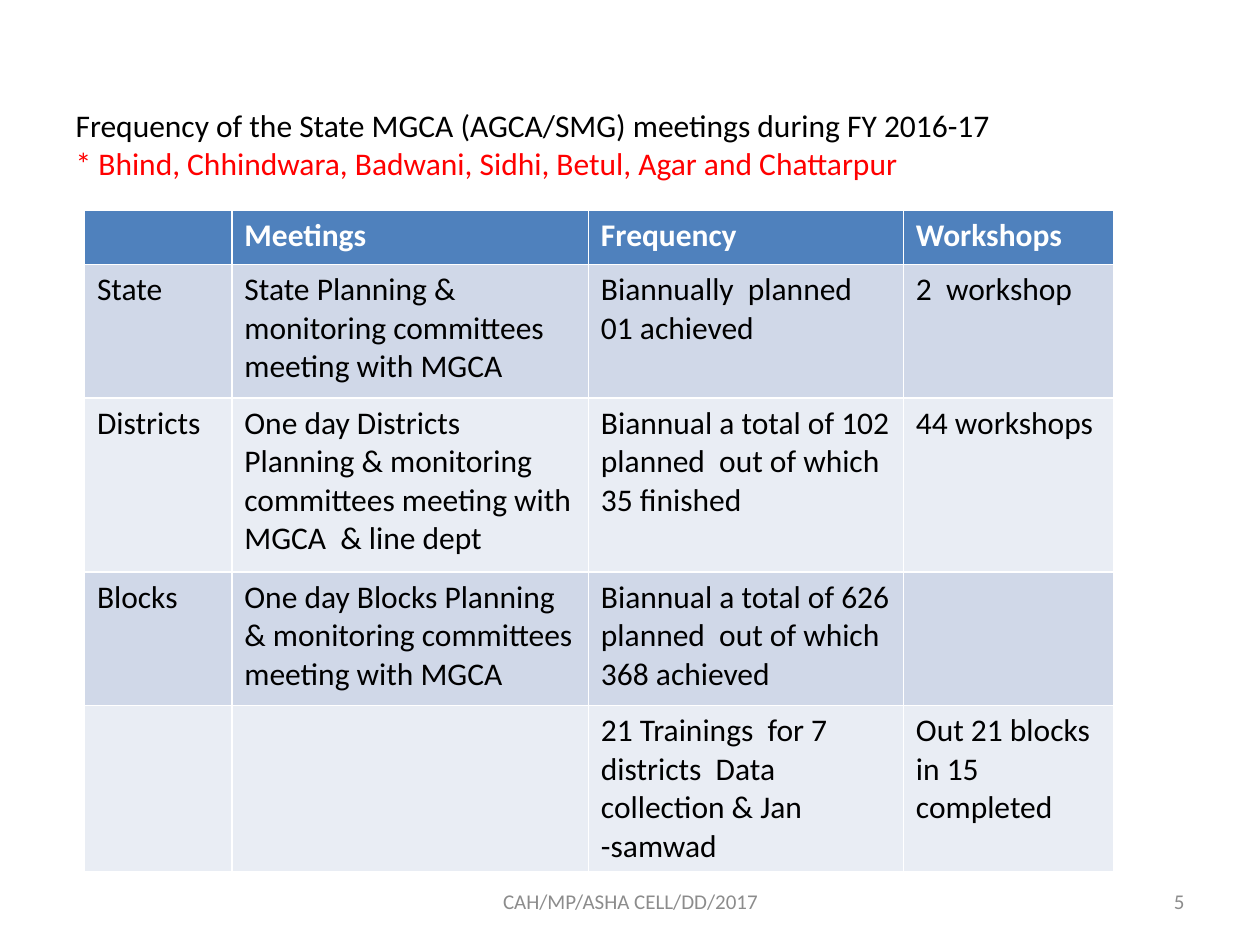
from pptx import Presentation
from pptx.dml.color import RGBColor
from pptx.enum.text import MSO_ANCHOR as Anchor, MSO_AUTO_SIZE as AutoSize, PP_ALIGN as Align
from pptx.util import Inches, Pt

BLACK = RGBColor(0x00, 0x00, 0x00)
WHITE = RGBColor(0xFF, 0xFF, 0xFF)
RED = RGBColor(0xFF, 0x00, 0x00)
GREY = RGBColor(0x8C, 0x8C, 0x8C)
HEADER_BLUE = RGBColor(0x4F, 0x81, 0xBD)
BANDS = [RGBColor(0xD0, 0xD8, 0xE8), RGBColor(0xE9, 0xED, 0xF4)]
FONT = "Calibri"

HEADING = [
    ("Frequency of the State MGCA (AGCA/SMG) meetings during FY 2016-17", BLACK),
    ("* Bhind, Chhindwara, Badwani, Sidhi, Betul, Agar and Chattarpur", RED),
]
MEETINGS = [
    ["", "Meetings", "Frequency", "Workshops"],
    ["State", "State Planning & monitoring committees meeting with MGCA",
     "Biannually  planned\n01 achieved", "2  workshop"],
    ["Districts", "One day Districts Planning & monitoring committees meeting with MGCA  & line dept",
     "Biannual a total of 102 planned  out of which 35 finished", "44 workshops"],
    ["Blocks", "One day Blocks Planning & monitoring committees meeting with MGCA",
     "Biannual a total of 626 planned  out of which 368 achieved", ""],
    ["", "", "21 Trainings  for 7 districts  Data collection & Jan -samwad",
     "Out 21 blocks in 15 completed"],
]
COLUMN_WIDTHS = [1.17, 2.83, 2.5, 1.67]
ROW_HEIGHTS = [0.43, 1.06, 1.38, 1.06, 1.31]
FOOTERS = [
    ("CAH/MP/ASHA CELL/DD/2017", 3.42, 3.17, Align.CENTER),
    ("5", 7.17, 2.33, Align.RIGHT),
]


def write(frame, lines, size, bold=False, align=Align.LEFT):
    for index, (text, color) in enumerate(lines):
        para = frame.add_paragraph() if index else frame.paragraphs[0]
        para.alignment = align
        span = para.add_run()
        span.text = text
        span.font.name = FONT
        span.font.size = Pt(size)
        span.font.bold = bold
        span.font.color.rgb = color


def add_heading(page):
    title = page.shapes.title
    title.left, title.top, title.width, title.height = map(Inches, (0.5, 0.79, 9.08, 0.71))
    frame = title.text_frame
    frame.word_wrap = True
    frame.auto_size = AutoSize.NONE
    frame.vertical_anchor = Anchor.TOP
    write(frame, HEADING, 18)


def add_meetings(page):
    table = page.shapes.add_table(
        len(MEETINGS), len(COLUMN_WIDTHS), Inches(0.67), Inches(1.67),
        Inches(sum(COLUMN_WIDTHS)), Inches(sum(ROW_HEIGHTS))).table
    for column, width in zip(table.columns, COLUMN_WIDTHS):
        column.width = Inches(width)
    for row_index, (row, height) in enumerate(zip(MEETINGS, ROW_HEIGHTS)):
        table.rows[row_index].height = Inches(height)
        header = row_index == 0
        color = WHITE if header else BLACK
        for column_index, text in enumerate(row):
            cell = table.cell(row_index, column_index)
            cell.fill.solid()
            cell.fill.fore_color.rgb = HEADER_BLUE if header else BANDS[(row_index - 1) % 2]
            if text:
                write(cell.text_frame, [(line, color) for line in text.split("\n")], 18, header)


def add_footers(page):
    for text, left, width, align in FOOTERS:
        box = page.shapes.add_textbox(Inches(left), Inches(6.95), Inches(width), Inches(0.4))
        box.text_frame.word_wrap = True
        box.text_frame.vertical_anchor = Anchor.MIDDLE
        write(box.text_frame, [(text, GREY)], 12, align=align)


def main():
    deck = Presentation()
    deck.slide_width, deck.slide_height = Inches(10), Inches(7.5)
    page = deck.slides.add_slide(deck.slide_layouts[5])
    add_heading(page)
    add_meetings(page)
    add_footers(page)
    deck.save("out.pptx")


if __name__ == "__main__":
    main()
